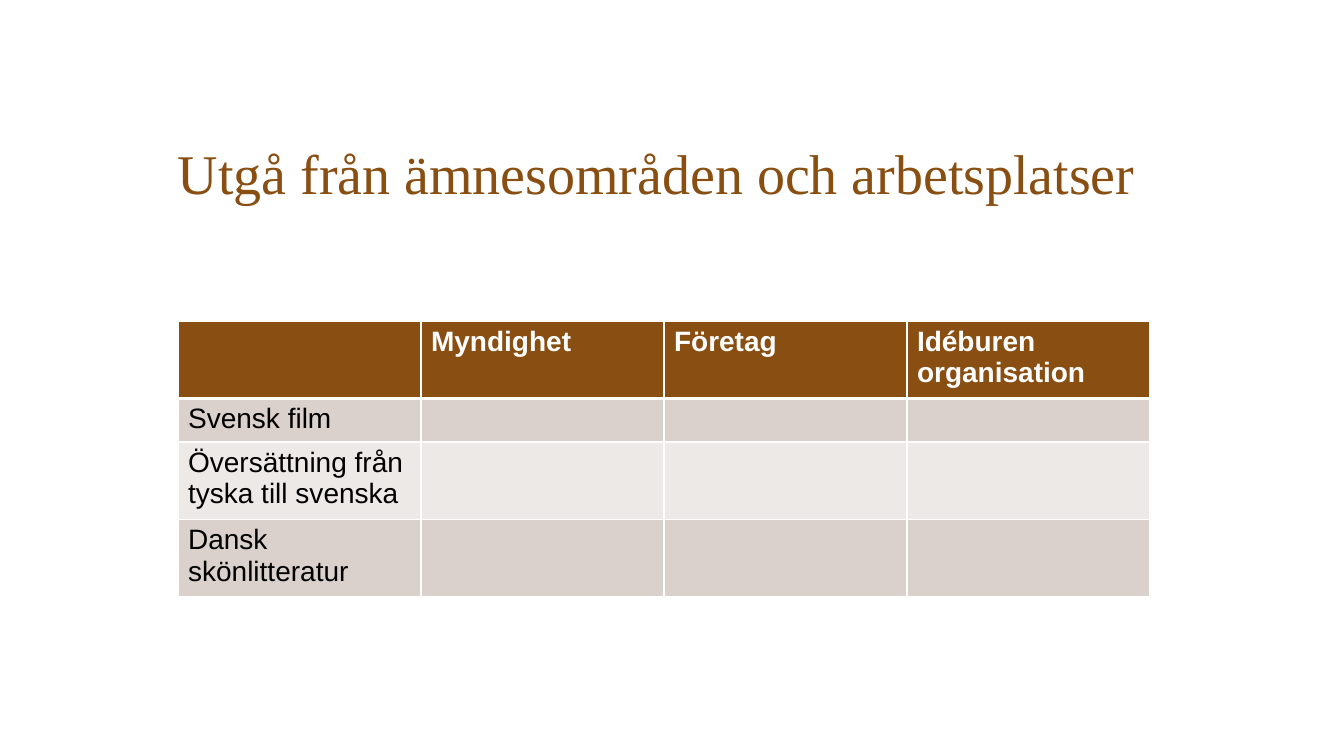
from lxml import etree
from pptx import Presentation
from pptx import util as u
from pptx.dml.color import RGBColor
from pptx.enum import text
from pptx.oxml import ns

PX = 914400 / 100.8
BROWN = RGBColor(0x89, 0x4E, 0x11)
WHITE = RGBColor(0xFF, 0xFF, 0xFF)
BLACK = RGBColor(0x00, 0x00, 0x00)
BAND_DARK = RGBColor(0xDA, 0xD0, 0xCC)
BAND_LIGHT = RGBColor(0xED, 0xE9, 0xE7)


def px(*lengths):
    return [u.Emu(round(length * PX)) for length in lengths]


def write(paragraph, words, color, **formats):
    run = paragraph.add_run()
    run.text = words
    run.font.color.rgb = color
    for key, value in formats.items():
        setattr(run.font, key, value)


deck = Presentation()
deck.slide_width, deck.slide_height = px(1344, 756)
slide = deck.slides.add_slide(deck.slide_layouts[6])

# Heading
heading = slide.shapes.add_textbox(*px(178, 39, 973, 199)).text_frame
heading_format = {
    "word_wrap": True,
    "vertical_anchor": text.MSO_ANCHOR.BOTTOM,
    "margin_left": 0,
    "margin_top": 0,
    "margin_right": 0,
    "margin_bottom": px(31)[0],
}
for key, value in heading_format.items():
    setattr(heading, key, value)
heading.paragraphs[0].line_spacing = 0.9
write(heading.paragraphs[0], "Utgå från ämnesområden och arbetsplatser", BROWN,
      name="Times New Roman", size=u.Pt(40))

# Subject areas by type of workplace
workplaces = ["", "Myndighet", "Företag", "Idéburen organisation"]
subjects = ["Svensk film", "Översättning från tyska till svenska", "Dansk skönlitteratur"]
entries = [workplaces] + [[subject, "", "", ""] for subject in subjects]
row_fills = [BROWN, BAND_DARK, BAND_LIGHT, BAND_DARK]
row_heights = px(72, 41, 72, 73)

matrix = slide.shapes.add_table(4, 4, *px(178, 321, 972, 258)).table
for column in matrix.columns:
    column.width = px(243)[0]

for r, (row, height) in enumerate(zip(matrix.rows, row_heights)):
    row.height = height
    for cell, words in zip(row.cells, entries[r]):
        # White grid, thicker below the header
        borders = {"lnL": 1, "lnR": 1, "lnT": 3 if r == 1 else 1, "lnB": 3 if r == 0 else 1}
        properties = cell._tc.get_or_add_tcPr()
        for side, points in borders.items():
            line = etree.SubElement(properties, ns.qn(f"a:{side}"), w=str(u.Pt(points)))
            line_fill = etree.SubElement(line, ns.qn("a:solidFill"))
            etree.SubElement(line_fill, ns.qn("a:srgbClr"), val=str(WHITE))
        cell.fill.solid()
        cell.fill.fore_color.rgb = row_fills[r]
        if words:
            write(cell.text_frame.paragraphs[0], words, WHITE if r == 0 else BLACK,
                  name="Arial", size=u.Pt(20), bold=r == 0)

deck.save("out.pptx")
